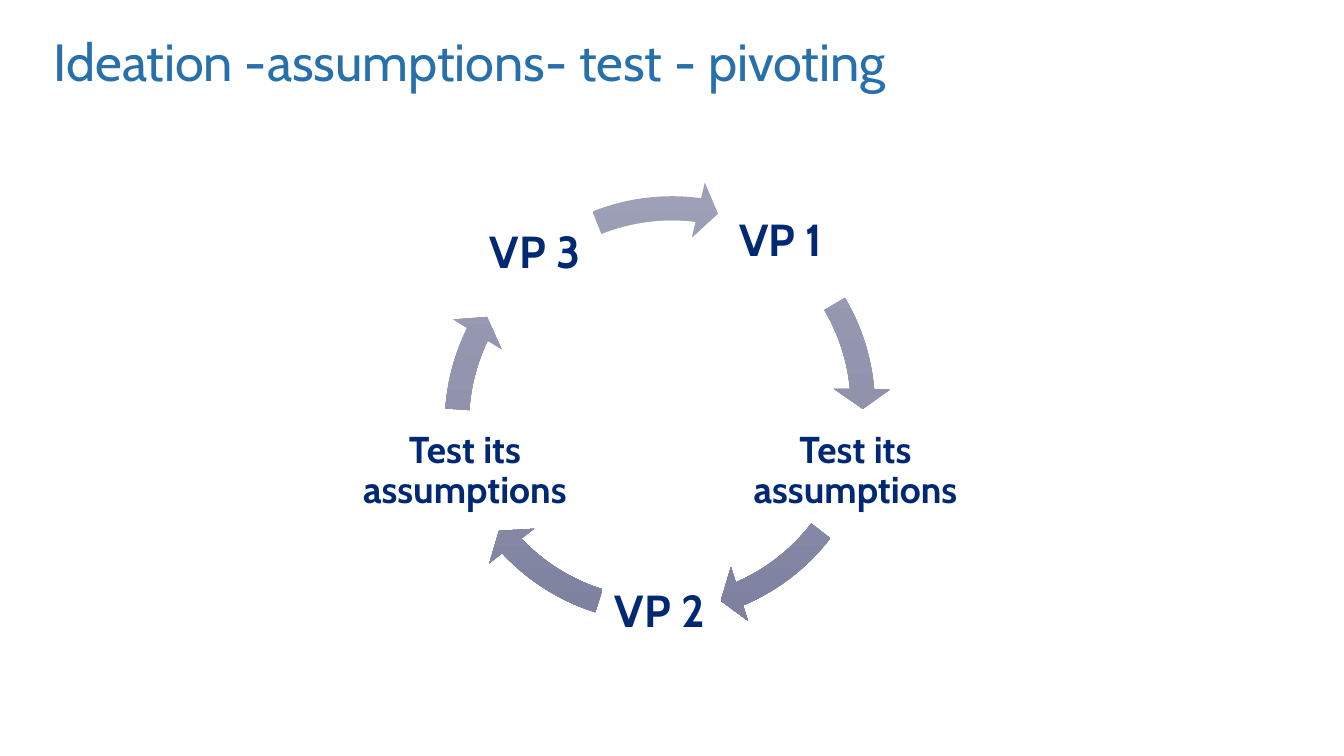
"""Build the slide on the cycle of value propositions and tests."""
from copy import deepcopy
from dataclasses import dataclass

from pptx import Presentation
from pptx.dml.color import RGBColor
from pptx.enum.shapes import MSO_SHAPE as Shape
from pptx.enum.text import MSO_ANCHOR as Anchor, PP_ALIGN as Align
from pptx.oxml.ns import qn
from pptx.util import Pt

TITLE = "Ideation -assumptions- test - pivoting"
STEPS = [
    {"text": "VP 1", "center": (418.3, 129.6), "width": 66.2, "size": 24},
    {"text": "Test its assumptions", "center": (458.3, 252.7), "width": 165, "size": 20},
    {"text": "VP 2", "center": (353.5, 328.3), "width": 66.2, "size": 24},
    {"text": "Test its assumptions", "center": (249.1, 252.7), "width": 139.7, "size": 20},
    {"text": "VP 3", "center": (286.6, 136.1), "width": 66.2, "size": 24},
]
ARROWS = [
    {"corner": (229.7, 94.3), "start": 329.42, "end": 354.9},
    {"corner": (229.7, 94.3), "start": 37.55, "end": 66.93},
    {"corner": (229.7, 94.3), "start": 107.48, "end": 136.86},
    {"corner": (229.7, 103), "start": 183.97, "end": 206.05},
    {"corner": (236.2, 96.5), "start": 248.32, "end": 277.47},
]
STEP_HEIGHT = 66.2
RING_SIZE = 247.7
THICKNESS, HEAD_ANGLE, HEAD_WIDTH = 0.052, 5.6, 0.061
DEGREE = 0.6


@dataclass(frozen=True)
class Theme:
    """Hold the colours, font and type size of the title."""
    font: str = "Cabin"
    title_size: int = 28
    title: str = "2870AC"
    step: str = "002873"
    ring: tuple = ((0, "9DA0B7"), (0.5, "9093AB"), (1, "7C7F9F"))


THEME = Theme()


def add_text(page, text, *, left, top, width, height, size, color,
             bold=False, align=Align.LEFT, anchor=Anchor.MIDDLE, inset=0):
    """Add a wrapped text box with one formatted paragraph."""
    box = page.shapes.add_textbox(Pt(left), Pt(top), Pt(width), Pt(height))
    frame = box.text_frame
    frame.word_wrap = True
    frame.vertical_anchor = anchor
    frame.margin_left = frame.margin_right = Pt(inset)
    frame.margin_top = frame.margin_bottom = Pt(inset)
    para = frame.paragraphs[0]
    para.alignment = align
    para.line_spacing = 0.9
    span = para.add_run()
    span.text = text
    span.font.name = THEME.font
    span.font.size = Pt(size)
    span.font.bold = bold
    span.font.color.rgb = RGBColor.from_string(color)


def add_arrow(page, corner, start, end):
    """Add one curved arrow of the ring, with angles in degrees."""
    left, top = corner
    arrow = page.shapes.add_shape(Shape.CIRCULAR_ARROW, Pt(left), Pt(top),
                                  Pt(RING_SIZE), Pt(RING_SIZE))
    values = (THICKNESS, HEAD_ANGLE * DEGREE, end * DEGREE, start * DEGREE, HEAD_WIDTH)
    for index, value in enumerate(values):
        arrow.adjustments[index] = value
    arrow.shadow.inherit = False
    arrow.line.fill.background()
    arrow.fill.gradient()
    arrow.fill.gradient_angle = 270
    stops = arrow.fill._xPr.find(".//" + qn("a:gsLst"))
    stops.append(deepcopy(stops[0]))
    for stop, (position, color) in zip(arrow.fill.gradient_stops, THEME.ring):
        stop.position = position
        stop.color.rgb = RGBColor.from_string(color)


def main():
    """Create the deck and save it."""
    deck = Presentation()
    deck.slide_width, deck.slide_height = Pt(720), Pt(405)
    page = deck.slides.add_slide(deck.slide_layouts[6])
    add_text(page, TITLE, left=28.8, top=21.6, width=558, height=28,
             size=THEME.title_size, color=THEME.title, anchor=Anchor.BOTTOM)
    for step, arrow in zip(STEPS, ARROWS):
        x, y = step["center"]
        add_text(page, step["text"], left=x - step["width"] / 2, top=y - STEP_HEIGHT / 2,
                 width=step["width"], height=STEP_HEIGHT, size=step["size"],
                 color=THEME.step, bold=True, align=Align.CENTER, inset=2.4)
        add_arrow(page, **arrow)
    deck.save("out.pptx")


if __name__ == "__main__":
    main()
